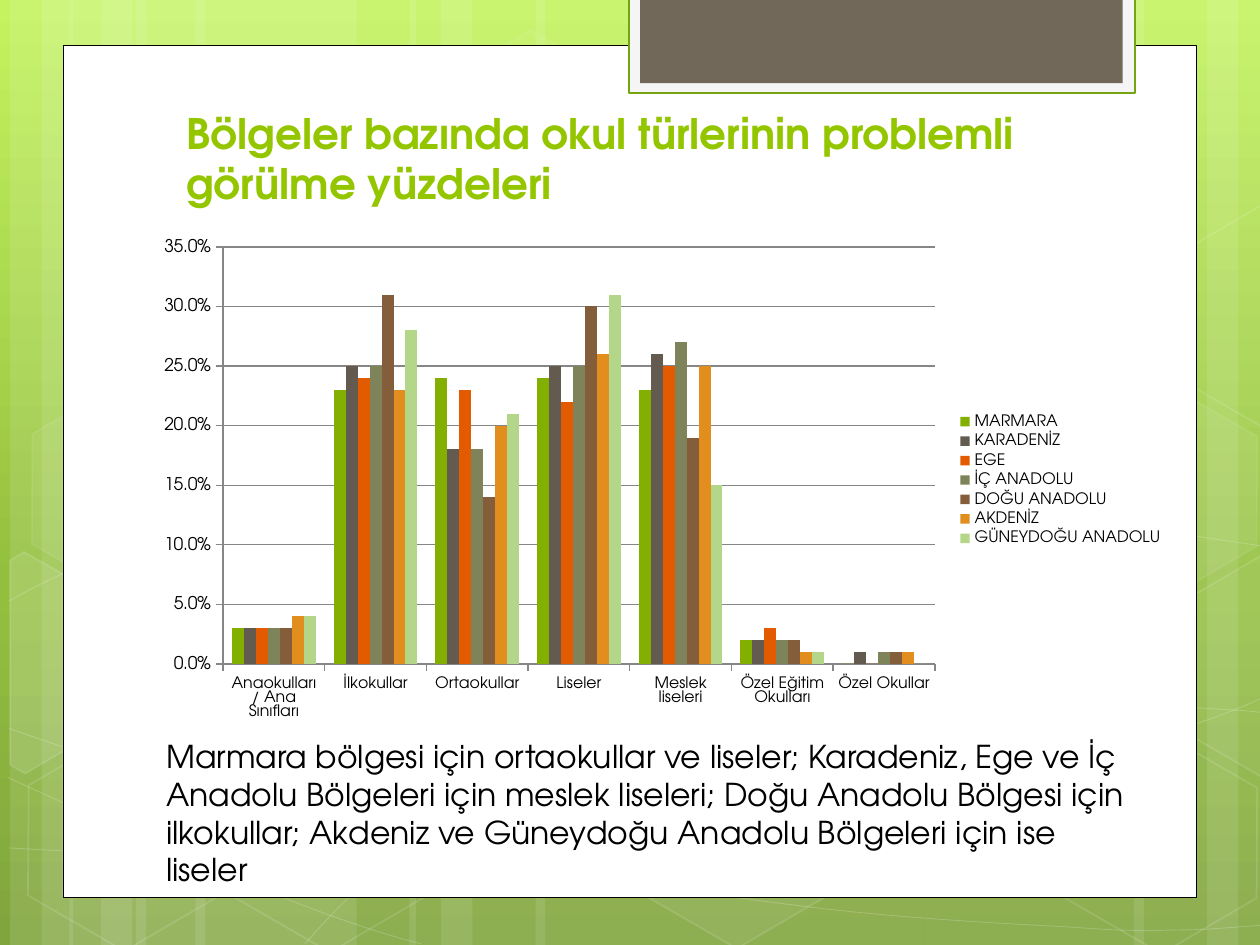
from copy import deepcopy
from lxml import etree
from pptx import Presentation
from pptx import util as u
from pptx.chart.data import CategoryChartData
from pptx.dml.color import RGBColor
from pptx.enum import chart as ch, shapes as sh, text as tx
from pptx.oxml import parse_xml
from pptx.oxml.ns import nsdecls, qn

# Content
TITLE = "Bölgeler bazında okul türlerinin problemli görülme yüzdeleri"
NOTE = ("Marmara bölgesi için ortaokullar ve liseler; Karadeniz, Ege ve İç "
        "Anadolu Bölgeleri için meslek liseleri; Doğu Anadolu Bölgesi için "
        "ilkokullar; Akdeniz ve Güneydoğu Anadolu Bölgeleri için ise liseler")
SCHOOLS = ["Anaokulları / Ana Sınıfları", "İlkokullar", "Ortaokullar", "Liseler",
           "Meslek liseleri", "Özel Eğitim Okulları", "Özel Okullar"]
REGIONS = [  # name, colour, share per school type
    ("MARMARA", "83AF00", (0.03, 0.23, 0.24, 0.24, 0.23, 0.02, 0)),
    ("KARADENİZ", "635B4F", (0.03, 0.25, 0.18, 0.25, 0.26, 0.02, 0.01)),
    ("EGE", "E25B00", (0.03, 0.24, 0.23, 0.22, 0.25, 0.03, 0)),
    ("İÇ ANADOLU", "7F8359", (0.03, 0.25, 0.18, 0.25, 0.27, 0.02, 0.01)),
    ("DOĞU ANADOLU", "845E3B", (0.03, 0.31, 0.14, 0.3, 0.19, 0.02, 0.01)),
    ("AKDENİZ", "E18E1E", (0.04, 0.23, 0.2, 0.26, 0.25, 0.01, 0.01)),
    ("GÜNEYDOĞU ANADOLU", "B4D688", (0.04, 0.28, 0.21, 0.31, 0.15, 0.01, 0)),
]
THEME = dict(font="TeX Gyre Adventor", green="94C600", edge="74A510", ink="000000",
             white="FFFFFF", mat="F5F5F5", tab="71685A", grid="868686",
             sky=[(0, "C3F35F"), (0.62, "93BF3F"), (1, "81A53E")],
             head=24, body=18, axis=10, label=9)

# Places, measured on an inch grid
CHART = (1.14, 1.82, 8.19, 3.98)
PLOT = (1.77, 1.96, 5.65, 3.31)
BANDS = [(0.08, 1.75), (0.55, 1.75), (3.25, 3.08)]  # start, wide stripe
RIGHT = [(7.33, 1.75), (9.58, 0.5), (9, 0.83)]
HEXES = [  # left, top, fill %, line %
    (3.34, 0.36, 4, 8), (4.97, 5.89, 6, 12), (0.11, 5.91, 0, 12),
    (0.14, 3.12, 7, 8), (1.74, 5.92, 0, 12), (7.53, 4.53, 10, 12),
    (8.34, 5.93, 0, 12), (8.34, 3.14, 7, 8)]
CUTS = [  # fill %, corners of a hexagon cut by the slide edge
    (10, [(0.08, 4.45), (0.19, 4.38), (0.96, 4.82), (0.95, 5.7), (0.2, 6.14), (0.08, 6.07)]),
    (4, [(9.26, 4.85), (10.01, 4.41), (10.09, 4.46), (10.09, 6.13), (10.02, 6.17), (9.26, 5.73)]),
    (0, [(9.26, 2.07), (10.01, 1.63), (10.1, 1.68), (10.09, 3.35), (10.02, 3.39), (9.26, 2.95)])]
WAVES = [  # start, then two handles and an end for each arc
    [(0.07, 6.73), (0.61, 6.76), (1.15, 6.79), (1.9, 6.78), (2.65, 6.77), (3.58, 6.75),
     (4.58, 6.65), (5.58, 6.55), (7, 6.36), (7.92, 6.17), (8.83, 5.98), (9.77, 5.68), (10.07, 5.51)],
    [(0.07, 4.77), (0.36, 4.61), (0.65, 4.46), (1.21, 4.31), (1.78, 4.16), (2.59, 3.94),
     (3.47, 3.87), (4.36, 3.8), (5.44, 3.79), (6.54, 3.87), (7.64, 3.95), (9.47, 4.26), (10.07, 4.34)],
    [(0.06, 6.17), (1.27, 6.72), (2.47, 7.27), (3.34, 7.49)],
    [(0.07, 5.78), (0.38, 5.89), (0.7, 6), (1.28, 6.16), (1.86, 6.31), (2.73, 6.56),
     (3.57, 6.73), (4.4, 6.9), (5.45, 7.08), (6.28, 7.18), (7.11, 7.29), (8, 7.33),
     (8.53, 7.36), (9.05, 7.4), (9.19, 7.38), (9.45, 7.38), (9.71, 7.37), (9.89, 7.35), (10.07, 7.34)],
    [(2.42, 7.49), (2.6, 7.29), (2.78, 7.09), (3.02, 6.91), (3.26, 6.73), (3.6, 6.53),
     (3.88, 6.39), (4.16, 6.25), (4.33, 6.19), (4.7, 6.09), (5.06, 5.99), (5.73, 5.85),
     (6.08, 5.78), (6.44, 5.71), (6.49, 5.71), (6.8, 5.69), (7.11, 5.66), (7.6, 5.63),
     (7.94, 5.62), (8.29, 5.61), (8.86, 5.62), (8.86, 5.62), (9.08, 5.62), (9.31, 5.62),
     (9.53, 5.62), (9.71, 5.63), (9.88, 5.64), (9.97, 5.65), (10.06, 5.66), (10.03, 5.65), (10.06, 5.66)]]


def at(val):
    return u.Cm(val * 2.54)


def rgb(code):
    return RGBColor.from_string(code)


def fade(node, pct):
    etree.SubElement(node, qn("a:alpha")).set("val", str(pct * 1000))


def paint(shape, fill=None, line=None, wide=1, clear=100, thin=100):
    """Fill and outline a shape; clear and thin are opacities in percent."""
    shape.shadow.inherit = False
    for part, code in ((shape.fill, fill), (shape.line.fill, line)):
        if code:
            part.solid()
            part.fore_color.rgb = rgb(code)
        else:
            part.background()
    if line:
        shape.line.width = u.Pt(wide)
    props, tail = shape.element.spPr, qn("a:solidFill") + "/" + qn("a:srgbClr")
    if fill and clear < 100:
        fade(props.find(tail), clear)
    if line and thin < 100:
        fade(props.find(qn("a:ln") + "/" + tail), thin)


def block(box, kind=sh.MSO_SHAPE.RECTANGLE, **look):
    shape = slide.shapes.add_shape(kind, *map(at, box))
    paint(shape, **look)
    return shape


def trace(dots, close, **look):
    dots = [(at(x), at(y)) for x, y in dots]
    pen = slide.shapes.build_freeform(*dots[0], scale=1.0)
    pen.add_line_segments(dots[1:], close=close)
    shape = pen.convert_to_shape()
    paint(shape, **look)
    return shape


def bend(shape):
    """Join each three line steps into one Bezier arc."""
    track = shape.element.find(".//" + qn("a:path"))
    legs = track.findall(qn("a:lnTo"))
    for i in range(0, len(legs), 3):
        arc = etree.SubElement(track, qn("a:cubicBezTo"))
        for leg in legs[i:i + 3]:
            arc.append(leg[0])
            track.remove(leg)


def style(font, size, color=THEME["ink"], bold=False):
    font.name, font.size, font.bold = THEME["font"], u.Pt(size), bold
    font.color.rgb = rgb(color)


def write(words, box, anchor=tx.MSO_ANCHOR.TOP, **form):
    frame = slide.shapes.add_textbox(*map(at, box)).text_frame
    frame.word_wrap, frame.vertical_anchor = True, anchor
    run = frame.paragraphs[0].add_run()
    run.text = words
    style(run.font, **form)


deck = Presentation()
deck.slide_width, deck.slide_height = at(10), at(7.5)
slide = deck.slides.add_slide(deck.slide_layouts[6])

# Gradient background
sky = slide.background.fill
sky.gradient()
sky.gradient_angle = 270
stops = slide.element.find(".//" + qn("a:gsLst"))
stops.append(deepcopy(stops[-1]))
for stop, (pos, code) in zip(sky.gradient_stops, THEME["sky"]):
    stop.position, stop.color.rgb = pos, rgb(code)

# Stripes, waves and hexagons
white = THEME["white"]
bars = [bar for x, wide in BANDS
        for bar in ((x + 1, wide), (x, 0.5), (x + 0.25, 0.83))] + RIGHT
for x, wide in bars:
    block((x, 0, wide, 7.5), fill=white, clear=10)
for knots in WAVES:
    bend(trace(knots, False, line=white, wide=0.5, thin=20))
for x, y, full, thin in HEXES:
    cell = block((x, y, 1.75, 1.52), sh.MSO_SHAPE.HEXAGON, fill=white if full else None,
                 clear=full, line=white, thin=thin)
    cell.rotation, cell.adjustments[0] = 30, 0.285
for full, dots in CUTS:
    trace(dots, True, fill=white if full else None, clear=full, line=white, thin=12)

# Page and tab
block((0.5, 0.36, 9, 6.76), fill=white, line=THEME["ink"], wide=0.5)
block((4.99, -0.02, 4.02, 0.76), fill=THEME["mat"], line=THEME["edge"], wide=1.25)
block((5.08, -0.02, 3.83, 0.68), fill=THEME["tab"])

write(TITLE, (1.38, 1.12, 7.45, 0.58), tx.MSO_ANCHOR.BOTTOM,
      size=THEME["head"], color=THEME["green"], bold=True)

# Chart
data = CategoryChartData(number_format="0.0%")
data.categories = SCHOOLS
for name, _, vals in REGIONS:
    data.add_series(name, vals)
chart = slide.shapes.add_chart(ch.XL_CHART_TYPE.COLUMN_CLUSTERED, *map(at, CHART), data).chart
style(chart.font, THEME["axis"])
chart.has_title = False
chart.has_legend = True
chart.legend.position = ch.XL_LEGEND_POSITION.RIGHT
chart.legend.include_in_layout = False
style(chart.legend.font, THEME["label"])
plot = chart.plots[0]
plot.gap_width, plot.overlap, plot.vary_by_categories = 150, 0, False
for ser, (_, code, _) in zip(plot.series, REGIONS):
    ser.format.fill.solid()
    ser.format.fill.fore_color.rgb = rgb(code)
cats, vals = chart.category_axis, chart.value_axis
vals.minimum_scale, vals.maximum_scale, vals.major_unit = 0, 0.35, 0.05
vals.has_major_gridlines = True
vals.tick_labels.number_format = "0.0%"
vals.tick_labels.number_format_is_linked = False
for axis, size in ((cats, THEME["label"]), (vals, THEME["axis"])):
    axis.major_tick_mark = ch.XL_TICK_MARK.OUTSIDE
    style(axis.tick_labels.font, size)
for rule in (cats.format.line, vals.format.line, vals.major_gridlines.format.line):
    rule.color.rgb, rule.width = rgb(THEME["grid"]), u.Pt(0.75)

# Fixed plot area, as shares of the chart
area = chart.element.find(".//" + qn("c:plotArea"))
for old in area.findall(qn("c:layout")):
    area.remove(old)
left, top, wide, high = CHART
spots = [("layoutTarget", "inner"), ("xMode", "edge"), ("yMode", "edge"),
         ("x", (PLOT[0] - left) / wide), ("y", (PLOT[1] - top) / high),
         ("w", PLOT[2] / wide), ("h", PLOT[3] / high)]
area.insert(0, parse_xml("<c:layout %s><c:manualLayout>%s</c:manualLayout></c:layout>" % (
    nsdecls("c"), "".join('<c:%s val="%s"/>' % spot for spot in spots))))

write(NOTE, (1.22, 5.8, 7.95, 1.31), size=THEME["body"])
deck.save("out.pptx")
